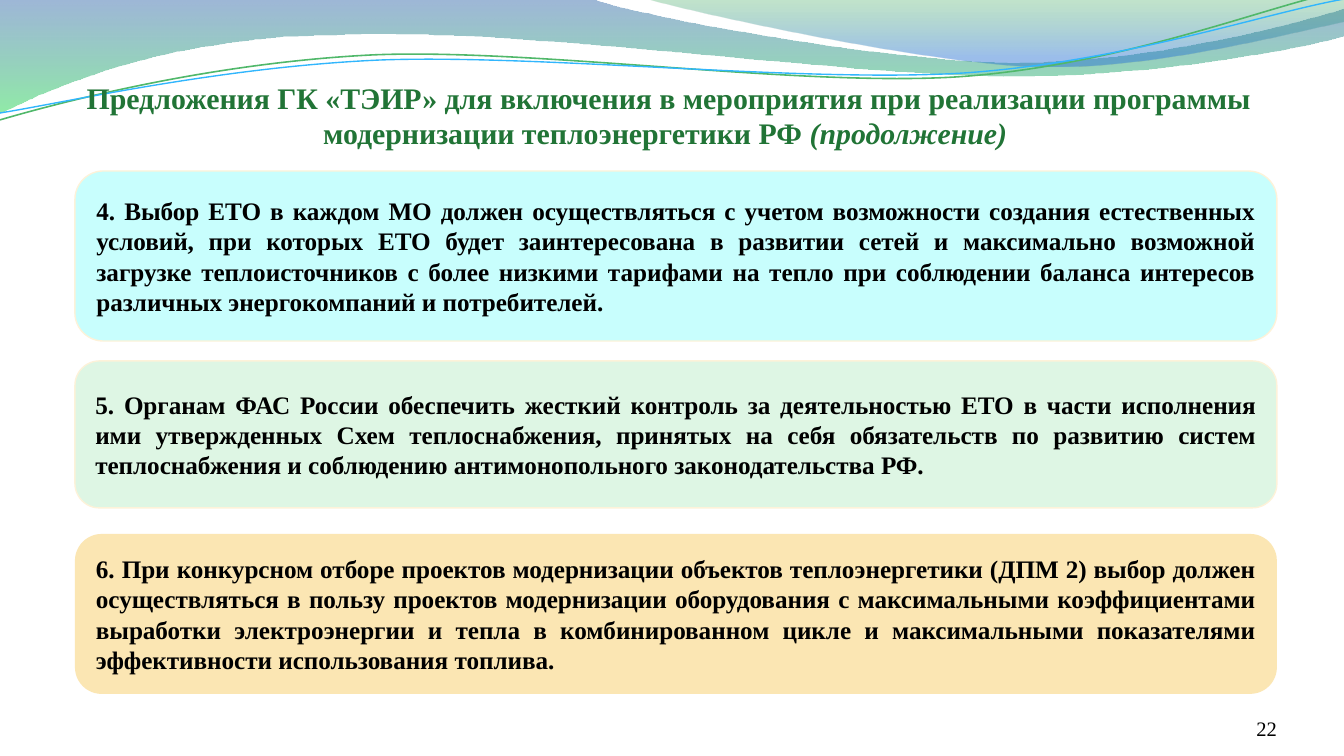
from math import cos, radians, sin

from lxml.etree import SubElement
from pptx import Presentation
from pptx.dml.color import RGBColor
from pptx.enum.shapes import MSO_SHAPE
from pptx.enum.text import MSO_ANCHOR, MSO_AUTO_SIZE, PP_ALIGN
from pptx.oxml.ns import qn
from pptx.util import Emu, Pt

SCALE = 914400 / 134.4
BOX_LEFT, BOX_WIDTH = 75, 1202
TILT = 2.7

WAVES = [
    ([(0, 0), (591, -1), (640, 17, 892, 63, 1019, 63), (1146, 63, 1288, 26, 1344, 9),
      (1345, 36), (1321, 44, 1169, 77, 1003, 77), (836, 75, 513, 28, 345, 35),
      (173, 36, 62, 83, -1, 114), (0, 0)],
     [(0, "2960A7", 45), (1, "35DA5E", 55)]),
    ([(644, -1), (684, 11, 917, 62, 1034, 66), (1150, 70, 1292, 32, 1344, 22), (1344, 0),
      (644, -1)],
     [(0, "36A752", 30), (0.8, "2472D3", 45)]),
]
LINES = [
    ([(0, 120), (65, 101, 212, 63, 372, 55), (532, 48, 796, 87, 957, 77),
      (1120, 66, 1262, 8, 1341, -9)], (671, 58), "50B86A", 0.85),
    ([(0, 113), (63, 103, 220, 67, 380, 60), (542, 54, 802, 83, 964, 73),
      (1124, 62, 1265, 13, 1344, -1)], (671, 60), "31B6FD", 0.75),
]
PROPOSALS = [
    (171, 170, "C8FEFD", "FDF2D9",
     "4. Выбор ЕТО в каждом МО должен осуществляться с учетом возможности создания "
     "естественных условий, при которых ЕТО будет заинтересована в развитии сетей и "
     "максимально возможной загрузке теплоисточников с более низкими тарифами на тепло "
     "при соблюдении баланса интересов различных энергокомпаний и потребителей."),
    (361, 147, "DEF6E4", "FDF2D9",
     "5. Органам ФАС России обеспечить жесткий контроль за деятельностью ЕТО в части "
     "исполнения ими утвержденных Схем теплоснабжения, принятых на себя обязательств по "
     "развитию систем теплоснабжения и соблюдению антимонопольного законодательства РФ."),
    (534, 160, "FBE6B3", None,
     "6. При конкурсном отборе проектов модернизации объектов теплоэнергетики (ДПМ 2) "
     "выбор должен осуществляться в пользу проектов модернизации оборудования с "
     "максимальными коэффициентами выработки электроэнергии и тепла в комбинированном "
     "цикле и максимальными показателями эффективности использования топлива. "),
]


def px(length):
    """Turn pixels into EMU."""
    return Emu(round(length * SCALE))


def color(value):
    """Turn a hex string into a colour."""
    return RGBColor.from_string(value)


def rotate(segments, center, angle):
    """Turn all points of the segments clockwise around a center."""
    cosine, sine = cos(radians(angle)), sin(radians(angle))
    turned = []
    for segment in segments:
        values = []
        for x, y in zip(segment[::2], segment[1::2]):
            dx, dy = x - center[0], y - center[1]
            values += [center[0] + dx * cosine - dy * sine, center[1] + dx * sine + dy * cosine]
        turned.append(values)
    return turned


class SlideBuilder:
    """Holds the style and the current slide."""

    font = "Times New Roman"
    ink = "000000"
    title_ink = "217436"

    def __init__(self, slide):
        """Keep the slide to draw on."""
        self.slide = slide

    def style(self, paragraph, size, ink, bold=False):
        """Format every run of a paragraph."""
        for run in paragraph.runs:
            run.font.name = self.font
            run.font.size = Pt(size)
            run.font.bold = bold
            run.font.color.rgb = color(ink)

    def freeform(self, segments, closed):
        """Add an outline of straight pairs and cubic sextuples."""
        points = [(px(x), px(y)) for segment in segments
                  for x, y in zip(segment[::2], segment[1::2])]
        builder = self.slide.shapes.build_freeform(*points[0])
        builder.add_line_segments(points[1:], close=closed)
        shape = builder.convert_to_shape()
        shape.shadow.inherit = False
        steps = iter(list(shape.element.spPr.iter(qn("a:lnTo"))))
        for segment in segments[1:]:
            step = next(steps)
            if len(segment) == 6:
                curve = step.makeelement(qn("a:cubicBezTo"))
                step.addprevious(curve)
                for control in (step, next(steps), next(steps)):
                    curve.append(control[0])
                    control.getparent().remove(control)
        return shape

    def wave(self, segments, stops):
        """Add a filled wave with a translucent vertical gradient."""
        shape = self.freeform(segments, True)
        shape.line.fill.background()
        shape.fill.gradient()
        shape.fill.gradient_angle = 270
        for stop, (position, value, _) in zip(shape.fill.gradient_stops, stops):
            stop.position = position
            stop.color.rgb = color(value)
        for element, (_, _, opacity) in zip(shape.element.spPr.iter(qn("a:srgbClr")), stops):
            SubElement(element, qn("a:alpha"), val=str(opacity * 1000))

    def curve(self, segments, center, value, width):
        """Add an open curved line, tilted around its center."""
        shape = self.freeform(rotate(segments, center, TILT), False)
        shape.rotation = -TILT
        shape.fill.background()
        shape.line.color.rgb = color(value)
        shape.line.width = Pt(width)

    def title(self, left, top, width, height, text, remark):
        """Place the title above the waves, with an italic remark."""
        title = self.slide.shapes.title
        self.slide.shapes.element.append(title.element)
        title.left, title.top, title.width, title.height = map(px, (left, top, width, height))
        frame = title.text_frame
        frame.auto_size = MSO_AUTO_SIZE.NONE
        frame.word_wrap = True
        frame.vertical_anchor = MSO_ANCHOR.BOTTOM
        frame.margin_left = frame.margin_right = frame.margin_bottom = 0
        frame.text = text
        paragraph = frame.paragraphs[0]
        paragraph.alignment = PP_ALIGN.CENTER
        run = paragraph.add_run()
        run.text = remark
        run.font.italic = True
        self.style(paragraph, 16, self.title_ink, bold=True)

    def box(self, top, height, fill, outline, text):
        """Add a rounded box with a justified proposal."""
        shape = self.slide.shapes.add_shape(
            MSO_SHAPE.ROUNDED_RECTANGLE, px(BOX_LEFT), px(top), px(BOX_WIDTH), px(height))
        shape.shadow.inherit = False
        shape.fill.solid()
        shape.fill.fore_color.rgb = color(fill)
        if outline:
            shape.line.color.rgb = color(outline)
            shape.line.width = Pt(0.75)
        else:
            shape.line.fill.background()
        frame = shape.text_frame
        frame.word_wrap = True
        frame.vertical_anchor = MSO_ANCHOR.MIDDLE
        frame.text = text
        paragraph = frame.paragraphs[0]
        paragraph.alignment = PP_ALIGN.JUSTIFY
        self.style(paragraph, 13.5, self.ink, bold=True)

    def page_number(self, left, top, width, height, text):
        """Add the page number in the bottom corner."""
        shape = self.slide.shapes.add_textbox(*map(px, (left, top, width, height)))
        frame = shape.text_frame
        frame.word_wrap = True
        frame.vertical_anchor = MSO_ANCHOR.BOTTOM
        frame.margin_left = frame.margin_right = frame.margin_top = frame.margin_bottom = 0
        frame.text = text
        paragraph = frame.paragraphs[0]
        paragraph.alignment = PP_ALIGN.RIGHT
        self.style(paragraph, 11, self.ink)


def main():
    """Build the slide and save it."""
    presentation = Presentation()
    presentation.slide_width, presentation.slide_height = px(1344), px(756)
    builder = SlideBuilder(presentation.slides.add_slide(presentation.slide_layouts[5]))
    for wave in WAVES:
        builder.wave(*wave)
    for line in LINES:
        builder.curve(*line)
    for proposal in PROPOSALS:
        builder.box(*proposal)
    builder.page_number(1165, 701, 112, 40, "22")
    builder.title(
        75, 77, 1188, 74,
        "Предложения ГК «ТЭИР» для включения в мероприятия при реализации программы "
        "модернизации теплоэнергетики РФ ", "(продолжение) ")
    presentation.save("out.pptx")


if __name__ == "__main__":
    main()
